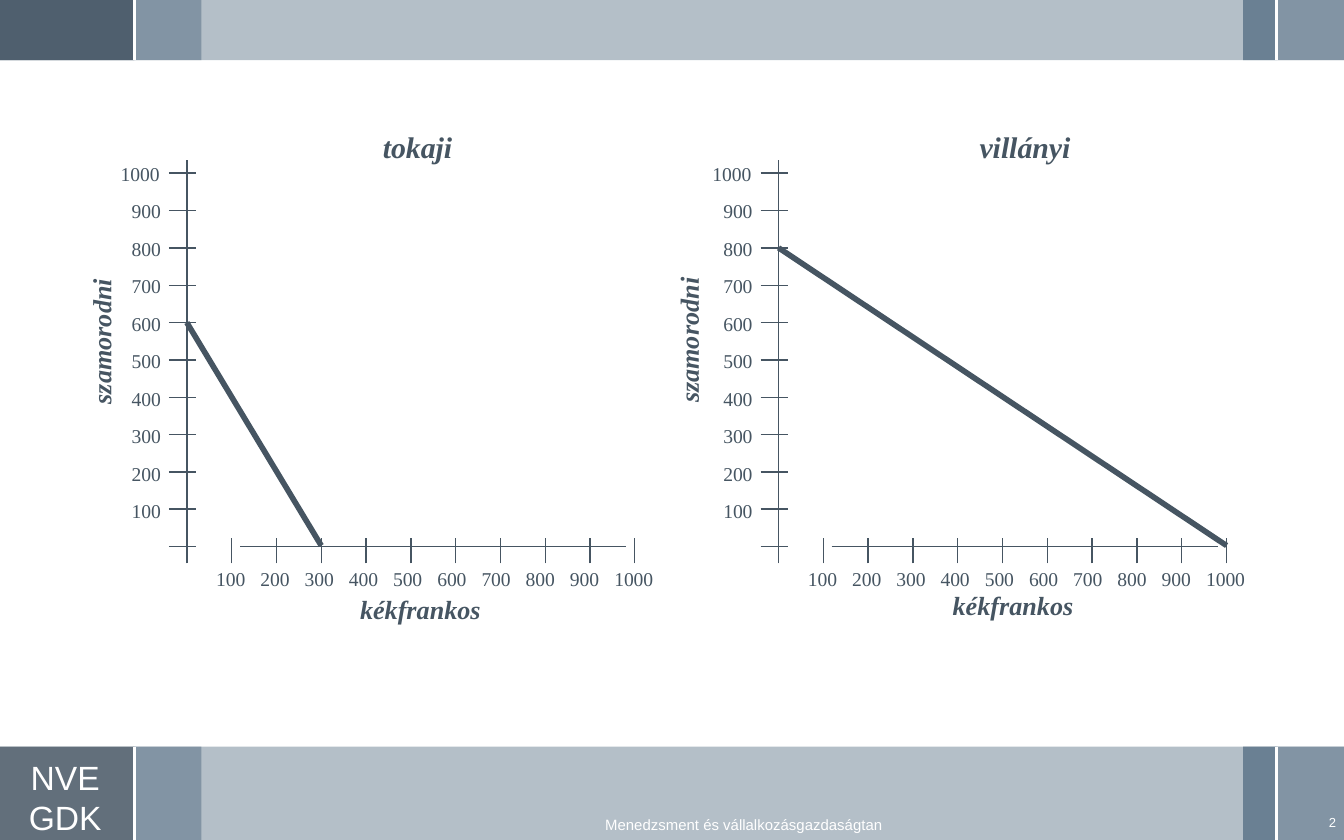
import dataclasses
import typing

import lxml.etree
import pptx
import pptx.dml.color
import pptx.enum.shapes
import pptx.enum.text
import pptx.oxml.ns
import pptx.shapes.autoshape
import pptx.shapes.shapetree
import pptx.util

Pt = pptx.util.Pt
RGBColor = pptx.dml.color.RGBColor
Align = pptx.enum.text.PP_ALIGN
Anchor = pptx.enum.text.MSO_ANCHOR
Shapes = typing.Union[pptx.shapes.shapetree.SlideShapes, pptx.shapes.shapetree.GroupShapes]

INK = RGBColor(0x46, 0x55, 0x62)
DARK = RGBColor(0x47, 0x55, 0x62)
STEEL = RGBColor(0x6A, 0x80, 0x93)
MIST = RGBColor(0x9B, 0xAA, 0xB7)
WHITE = RGBColor(0xFF, 0xFF, 0xFF)

PAGE_WIDTH = 720
PAGE_HEIGHT = 450
PAGE_NUMBER = "2"
BASE_Y = 292.8
TICK_X = 24
TICK_Y = 20


@dataclasses.dataclass(frozen=True)
class Band:
    top: float
    height: float
    solid_corner: bool


@dataclasses.dataclass(frozen=True)
class Style:
    size: float
    font: str = "Times New Roman"
    color: RGBColor = INK
    strong: bool = False
    align: Align = Align.LEFT
    anchor: Anchor = Anchor.TOP
    inset_x: float = 7.2
    inset_y: float = 3.6
    wrap: bool = True


@dataclasses.dataclass(frozen=True)
class Label:
    text: str
    left: float
    top: float
    width: float
    height: float
    style: Style
    rotation: float = 0


@dataclasses.dataclass(frozen=True)
class Diagram:
    origin_x: float
    szamorodni: int
    kekfrankos: int
    labels: tuple[Label, ...]


TICK_LABEL = Style(10.5, wrap=False)
HEADING = Style(16, strong=True, wrap=False)
AXIS_NAME = Style(14, strong=True, wrap=False)
FOOTER = Style(8, "Arial", WHITE, align=Align.CENTER, anchor=Anchor.MIDDLE, inset_x=5.8, inset_y=2.9)
NUMBER = dataclasses.replace(FOOTER, size=7, align=Align.RIGHT)
INSTITUTE = Style(18, "Arial", WHITE, align=Align.CENTER, inset_x=0, inset_y=0)

BANDS = (Band(400, 50, False), Band(0, 32.2, True))
DIAGRAMS = (
    Diagram(100.1, 600, 300, (
        Label("tokaji", 198, 65.5, 56.2, 26.6, HEADING),
        Label("szamorodni", 11.5, 168.5, 85.7, 24.5, AXIS_NAME, 270),
        Label("kékfrankos", 185.8, 314.6, 83.5, 24.5, AXIS_NAME),
    )),
    Diagram(417.1, 800, 1000, (
        Label("villányi", 517.7, 65.5, 68.4, 26.6, HEADING),
        Label("szamorodni", 326.2, 167.8, 85.7, 24.5, AXIS_NAME, 270),
        Label("kékfrankos", 503.3, 312.2, 83.5, 24.5, AXIS_NAME),
    )),
)


def add_block(shapes: Shapes, left: float, width: float, band: Band,
              color: RGBColor, opacity: int = 100) -> None:
    block = shapes.add_shape(pptx.enum.shapes.MSO_SHAPE.RECTANGLE,
                             Pt(left), Pt(band.top), Pt(width), Pt(band.height))
    block.shadow.inherit = False
    block.line.fill.background()
    block.fill.solid()
    block.fill.fore_color.rgb = color
    if opacity < 100:
        tint = block.element.spPr.find(".//" + pptx.oxml.ns.qn("a:srgbClr"))
        lxml.etree.SubElement(tint, pptx.oxml.ns.qn("a:alpha"), val=str(opacity * 1000))


def add_line(shapes: Shapes, start: tuple[float, float], end: tuple[float, float],
             color: RGBColor = INK, weight: float = 0.75) -> None:
    line = shapes.add_connector(pptx.enum.shapes.MSO_CONNECTOR.STRAIGHT,
                                Pt(start[0]), Pt(start[1]), Pt(end[0]), Pt(end[1]))
    line.line.color.rgb = color
    line.line.width = Pt(weight)
    lxml.etree.SubElement(line.element.spPr, pptx.oxml.ns.qn("a:effectLst"))


def add_label(shapes: Shapes, label: Label) -> pptx.shapes.autoshape.Shape:
    style = label.style
    box = shapes.add_textbox(Pt(label.left), Pt(label.top), Pt(label.width), Pt(label.height))
    box.rotation = label.rotation
    frame = box.text_frame
    frame.text = label.text
    frame.word_wrap = style.wrap
    frame.vertical_anchor = style.anchor
    frame.margin_left = frame.margin_right = Pt(style.inset_x)
    frame.margin_top = frame.margin_bottom = Pt(style.inset_y)
    for para in frame.paragraphs:
        para.alignment = style.align
        para.font.name = style.font
        para.font.size = Pt(style.size)
        para.font.color.rgb = style.color
        para.font.bold = para.font.italic = style.strong
    return box


def add_slide_number(shapes: Shapes, label: Label) -> None:
    box = add_label(shapes, label)
    span = box.element.find(".//" + pptx.oxml.ns.qn("a:r"))
    span.tag = pptx.oxml.ns.qn("a:fld")
    span.set("id", "{B6F15528-21DE-4FAA-801E-634DDDAF4B2B}")
    span.set("type", "slidenum")


def draw_band(shapes: Shapes, band: Band) -> None:
    bottom = band.top + band.height
    add_block(shapes, 684, 36, band, MIST)
    add_block(shapes, 666, 18, band, STEEL)
    add_block(shapes, 72, 36, band, MIST)
    if band.solid_corner:
        add_block(shapes, 0, 72, band, STEEL)
    add_block(shapes, 0, PAGE_WIDTH, band, STEEL, 50)
    add_line(shapes, (684, band.top), (684, bottom), WHITE, 1.5)
    add_block(shapes, 0, 72, band, DARK, 75)
    add_line(shapes, (72, band.top), (72, bottom), WHITE, 1.5)


def draw_diagram(shapes: Shapes, diagram: Diagram) -> None:
    x = diagram.origin_x
    add_line(shapes, (x, 85.9), (x, BASE_Y))
    add_line(shapes, (x + 28.5, BASE_Y), (x + 235.3, BASE_Y))
    for step in range(11):
        tick_x = x + step * TICK_X
        tick_y = BASE_Y - step * TICK_Y
        add_line(shapes, (x - 9.6, tick_y), (x + 5, tick_y))
        add_line(shapes, (tick_x, 301.8), (tick_x, 288))
    for step in range(1, 11):
        text = str(step * 100)
        width, shift = (36.7, 5.8) if step == 10 else (31, 0)
        add_label(shapes, Label(text, x - 15.1 + step * 23.7, 300.2, width, 20.9, TICK_LABEL))
        add_label(shapes, Label(text, x - 36.7 - shift, 283.9 - step * 20.07,
                                width, 20.2, TICK_LABEL))
    for label in diagram.labels:
        add_label(shapes, label)
    add_line(shapes, (x, BASE_Y - diagram.szamorodni / 100 * TICK_Y),
             (x + diagram.kekfrankos / 100 * TICK_X, BASE_Y - 0.5), weight=3)


def main() -> None:
    deck = pptx.Presentation()
    deck.slide_width = Pt(PAGE_WIDTH)
    deck.slide_height = Pt(PAGE_HEIGHT)
    deck.element.set("firstSlideNum", PAGE_NUMBER)
    page = deck.slides.add_slide(deck.slide_layouts[6])
    for band in BANDS:
        draw_band(page.shapes, band)
    add_label(page.shapes, Label("NVE\nGDK", 5.8, 405.4, 58.3, 43.9, INSTITUTE))
    add_label(page.shapes, Label("Menedzsment és vállalkozásgazdaságtan",
                                 172.1, 436.3, 452.9, 10.8, FOOTER))
    add_slide_number(page.shapes, Label(PAGE_NUMBER, 700.6, 433.4, 20.9, 14.4, NUMBER))
    for diagram in DIAGRAMS:
        draw_diagram(page.shapes.add_group_shape().shapes, diagram)
    deck.save("out.pptx")


if __name__ == "__main__":
    main()
